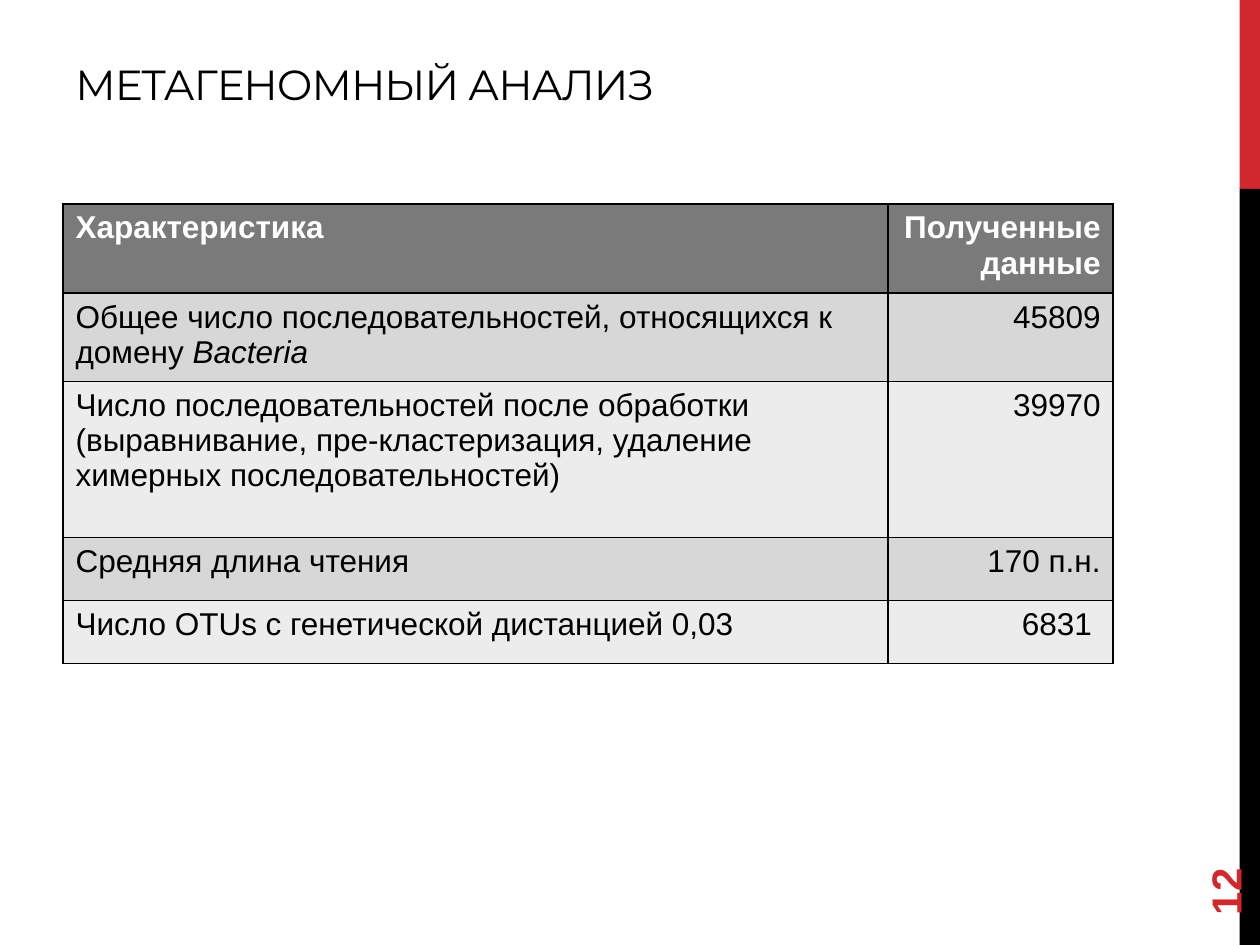
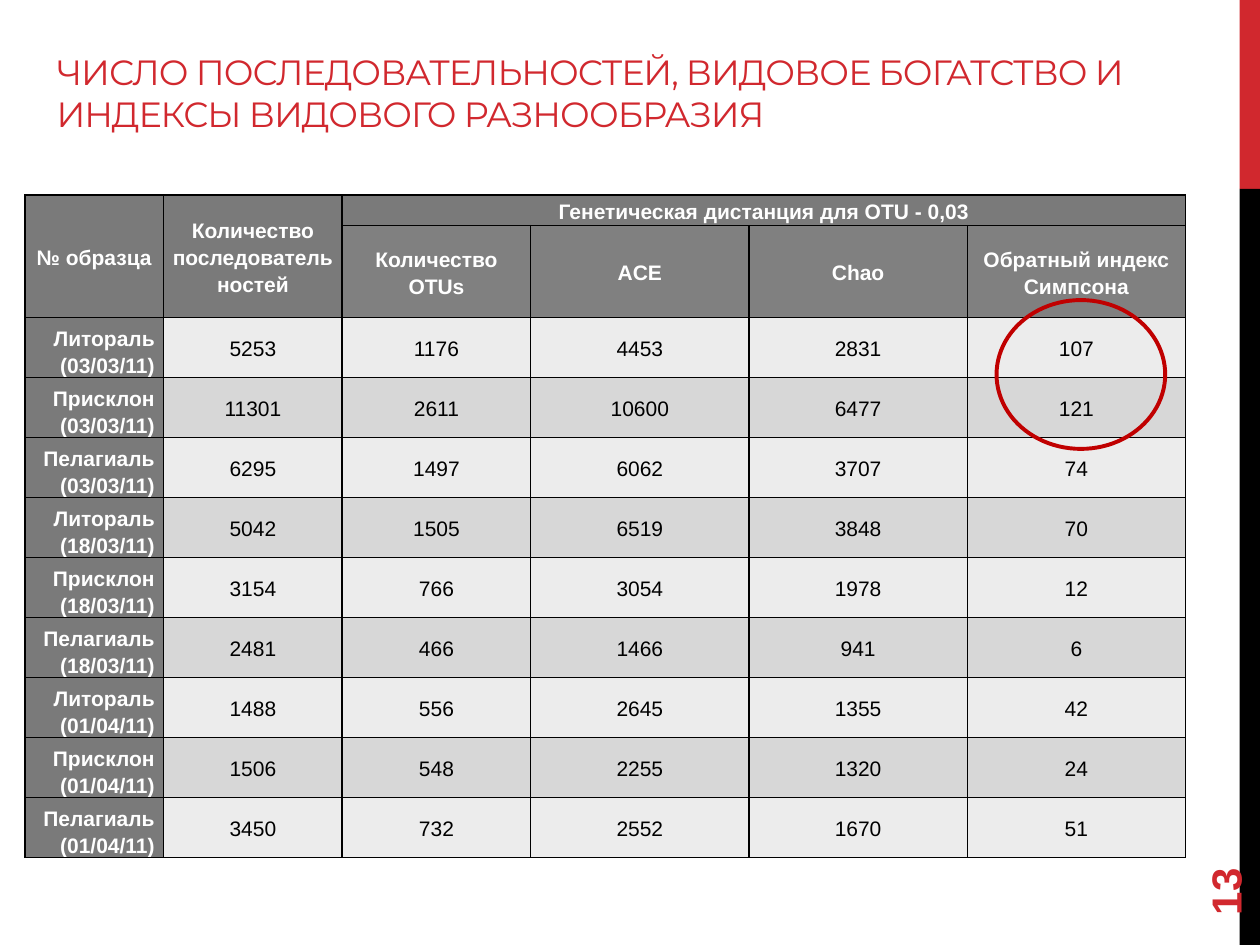
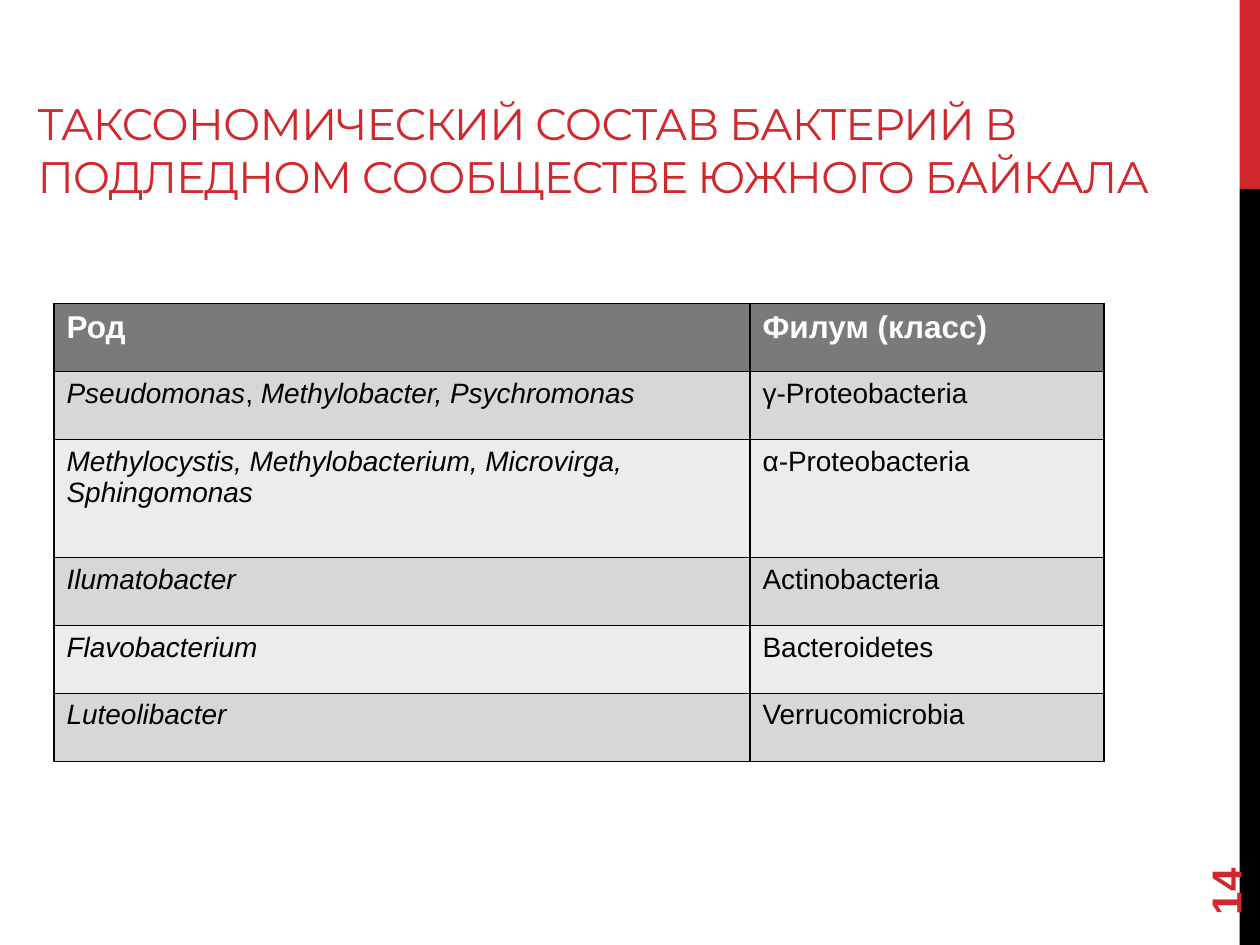
from dataclasses import dataclass
from itertools import product
from typing import Any

from lxml.etree import SubElement as Sub
from pptx import Presentation
from pptx.dml.color import RGBColor as Rgb
from pptx.enum.shapes import MSO_SHAPE as Form
from pptx.enum.text import MSO_ANCHOR as Anchor, PP_ALIGN as Align
from pptx.oxml.ns import qn
from pptx.util import Cm, Pt

# Shared look
RED, BLACK, WHITE = "D1282E", "000000", "FFFFFF"
RING = "C00000"
HEAD, SUBHEAD = "7A7A7A", "808080"
DARK, LIGHT = "D7D7D7", "ECECEC"
TITLE = {"name": "Montserrat", "bold": False}
NUMBER = {"name": "Arial", "bold": True, "size": Pt(24)}
LEFT, MID, RIGHT = Align.LEFT, Align.CENTER, Align.RIGHT


@dataclass
class Box:
    x: float
    y: float
    w: float
    h: float

    def spot(self) -> tuple:
        return Cm(self.x), Cm(self.y), Cm(self.w), Cm(self.h)


@dataclass
class Head:
    text: str
    box: Box
    size: float
    tint: str = RED


@dataclass
class Grid:
    box: Box
    cols: list[float]
    rows: list[float]
    cells: list[list[str]]
    sides: list[Any]
    size: float
    bands: tuple[str, str] = (DARK, LIGHT)
    heads: int = 1
    dense: bool = False


@dataclass
class Page:
    number: int
    head: Head
    grid: Grid
    ring: Box | None = None


BANDS = [(Box(24.99, 0, 0.41, 3.81), RED), (Box(24.99, 3.81, 0.41, 15.24), BLACK)]
FOOT = Box(22.86, 16.36, 3.66, 1.02)


def tone(code: str) -> Rgb:
    return Rgb.from_string(code)


def style(font: Any, look: dict, tint: str) -> None:
    for key, value in look.items():
        setattr(font, key, value)
    font.color.rgb = tone(tint)


def label(slide: Any, box: Box, text: str, look: dict, tint: str, anchor: Any) -> Any:
    shape = slide.shapes.add_textbox(*box.spot())
    frame = shape.text_frame
    frame.word_wrap, frame.vertical_anchor = True, anchor
    run = frame.paragraphs[0].add_run()
    run.text = text
    style(run.font, look, tint)
    return shape, run


def frame(slide: Any, page: Page) -> None:
    """Side bands, title and page number."""
    for box, tint in BANDS:
        band = slide.shapes.add_shape(Form.RECTANGLE, *box.spot())
        band.shadow.inherit = False
        band.fill.solid()
        band.fill.fore_color.rgb = tone(tint)
        band.line.fill.background()
    head = page.head
    look = TITLE | {"size": Pt(head.size)}
    _, run = label(slide, head.box, head.text, look, head.tint, Anchor.BOTTOM)
    run._r.get_or_add_rPr().set("spc", "-60")
    foot, _ = label(slide, FOOT, str(page.number), NUMBER, RED, Anchor.MIDDLE)
    foot.rotation = 270


def edge(cell: Any) -> None:
    props = cell._tc.get_or_add_tcPr()
    for side in ("lnL", "lnR", "lnT", "lnB"):
        line = Sub(props, qn(f"a:{side}"), w=str(Pt(1)))
        Sub(Sub(line, qn("a:solidFill")), qn("a:srgbClr"), val=BLACK)


def write(cell: Any, text: str, look: dict, tint: str, side: Any, gap: float | None) -> None:
    """Fill a cell; parts between asterisks are italic."""
    para = cell.text_frame.paragraphs[0]
    para.alignment = side
    if gap:
        para.line_spacing = gap
    for i, part in enumerate(text.split("*")):
        if part:
            run = para.add_run()
            run.text = part
            style(run.font, look | {"italic": i % 2 == 1}, tint)


def draw(slide: Any, grid: Grid) -> None:
    shape = slide.shapes.add_table(len(grid.rows), len(grid.cols), *grid.box.spot())
    table = shape.table
    table.horz_banding = False
    for col, width in zip(table.columns, grid.cols):
        col.width = Cm(width)
    for row, height in zip(table.rows, grid.rows):
        row.height = Cm(height)
    for r, c in product(range(len(grid.rows)), range(len(grid.cols))):
        cell, top = table.cell(r, c), r < grid.heads
        bold = top or (grid.dense and c == 0)
        edge(cell)
        fill = HEAD if bold else grid.bands[(r - grid.heads) % 2]
        if top and r == 1 and c > 1:
            fill = SUBHEAD
        cell.fill.solid()
        cell.fill.fore_color.rgb = tone(fill)
        side = grid.sides[c]
        if grid.dense:
            cell.margin_left = cell.margin_right = Cm(0.18)
            cell.margin_top = cell.margin_bottom = 0
            cell.vertical_anchor = Anchor.BOTTOM if bold and not top else Anchor.MIDDLE
            side = MID if top else side
        size = 18 if top and not grid.dense else grid.size
        look = {"name": "Arial", "size": Pt(size), "bold": bold}
        write(cell, grid.cells[r][c], look, WHITE if bold else BLACK, side,
              1.15 if grid.dense else None)
    if grid.heads == 2:
        for c in (0, 1):
            table.cell(0, c).merge(table.cell(1, c))
        table.cell(0, 2).merge(table.cell(0, len(grid.cols) - 1))


def circle(slide: Any, box: Box) -> None:
    ring = slide.shapes.add_shape(Form.OVAL, *box.spot())
    ring.shadow.inherit = False
    ring.fill.background()
    ring.line.color.rgb = tone(RING)
    ring.line.width = Pt(2.25)


# Sequence counts
COUNTS = [
    ["Характеристика", "Полученные данные"],
    ["Общее число последовательностей, относящихся к домену *Bacteria*", "45809"],
    ["Число последовательностей после обработки (выравнивание, "
     "пре-кластеризация, удаление химерных последовательностей)", "39970"],
    ["Средняя длина чтения", "170 п.н."],
    ["Число OTUs с генетической дистанцией 0,03", "6831 "],
]

# Diversity by date and site
DATES = ["03/03/11", "18/03/11", "01/04/11"]
SITES = ["Литораль", "Присклон", "Пелагиаль"]
VALUES = [
    (5253, 1176, 4453, 2831, 107),
    (11301, 2611, 10600, 6477, 121),
    (6295, 1497, 6062, 3707, 74),
    (5042, 1505, 6519, 3848, 70),
    (3154, 766, 3054, 1978, 12),
    (2481, 466, 1466, 941, 6),
    (1488, 556, 2645, 1355, 42),
    (1506, 548, 2255, 1320, 24),
    (3450, 732, 2552, 1670, 51),
]
INDEX = [
    ["№ образца", "Количество последовательностей",
     "Генетическая дистанция для OTU - 0,03", "", "", ""],
    ["", "", "Количество OTUs", "ACE", "Chao", "Обратный индекс Симпсона"],
] + [
    [f"{site} ({date})", *map(str, nums)]
    for (date, site), nums in zip(product(DATES, SITES), VALUES)
]

# Genera and phyla
TAXA = [
    ["Род", "Филум (класс)"],
    ["*Pseudomonas*, *Methylobacter, Psychromonas*", "γ-Proteobacteria"],
    ["*Methylocystis, Methylobacterium, Microvirga, Sphingomonas*", "α-Proteobacteria"],
    ["*Ilumatobacter*", "Actinobacteria"],
    ["*Flavobacterium*", "Bacteroidetes"],
    ["*Luteolibacter*", "Verrucomicrobia"],
]

PAGES = [
    Page(12, Head("МЕТАГЕНОМНЫЙ АНАЛИЗ", Box(1.27, 0.43, 16.08, 1.9), 24, BLACK),
         Grid(Box(1.27, 4.11, 21.17, 9.3), [16.63, 4.54],
              [1.8, 1.27, 3.15, 1.27, 1.27], COUNTS, [LEFT, RIGHT], 18)),
    Page(13, Head("ЧИСЛО ПОСЛЕДОВАТЕЛЬНОСТЕЙ, ВИДОВОЕ БОГАТСТВО И "
                  "ИНДЕКСЫ ВИДОВОГО РАЗНООБРАЗИЯ", Box(0.89, 0.53, 23.19, 2.31), 20),
         Grid(Box(0.5, 3.93, 23.4, 13.36), [2.8, 3.6, 3.8] + [4.4] * 3,
              [0.62, 1.85] + [1.21] * 9, INDEX, [RIGHT] + [MID] * 5, 12,
              (LIGHT, DARK), 2, True),
         Box(20.09, 6.05, 3.4, 3)),
    Page(14, Head("ТАКСОНОМИЧЕСКИЙ СОСТАВ БАКТЕРИЙ В ПОДЛЕДНОМ "
                  "СООБЩЕСТВЕ ЮЖНОГО БАЙКАЛА", Box(0.51, 2.51, 23.62, 1.7), 25.2),
         Grid(Box(1.09, 6.12, 21.17, 9.25), [14.03, 7.14],
              [1.37, 1.37, 2.38] + [1.37] * 3, TAXA, [LEFT, LEFT], 16)),
]


def main() -> None:
    deck = Presentation()
    deck.slide_width, deck.slide_height = Cm(25.4), Cm(19.05)
    for page in PAGES:
        slide = deck.slides.add_slide(deck.slide_layouts[6])
        frame(slide, page)
        draw(slide, page.grid)
        if page.ring:
            circle(slide, page.ring)
    deck.save("out.pptx")


if __name__ == "__main__":
    main()
